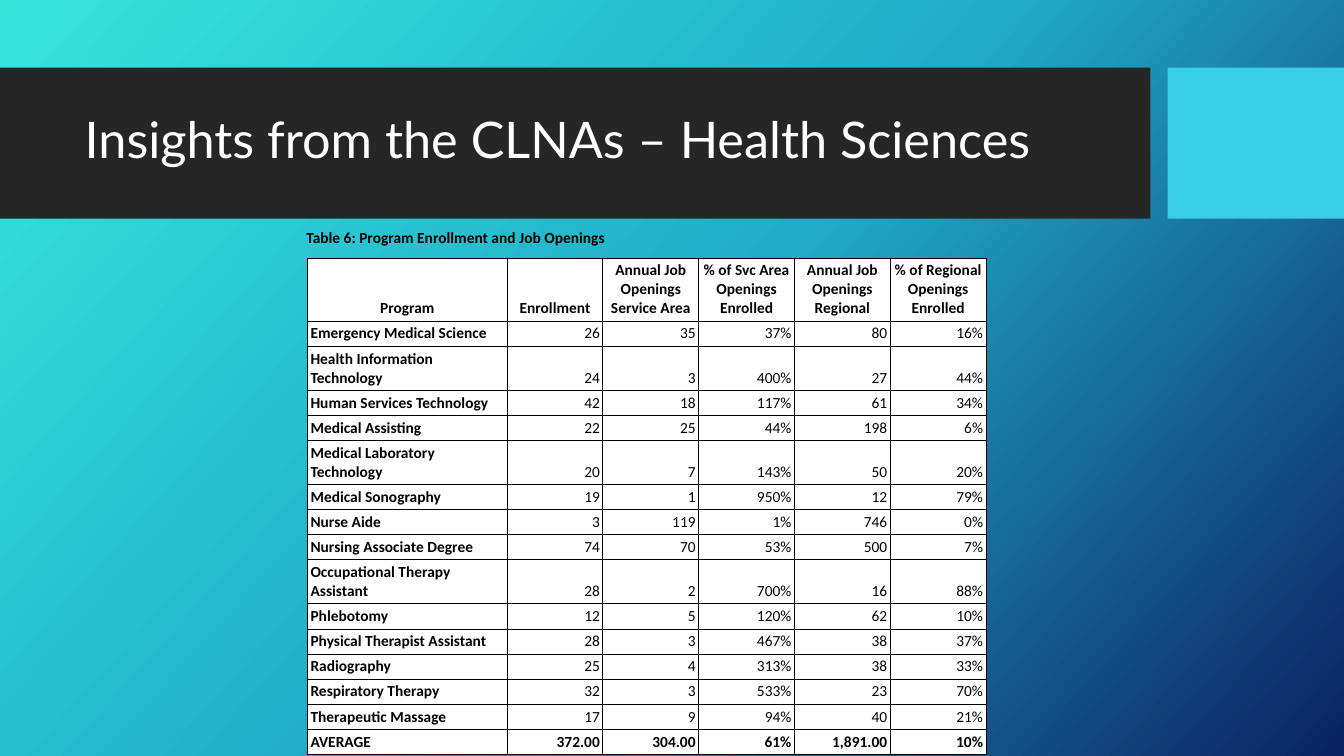
from copy import deepcopy
from dataclasses import dataclass
from typing import Any, NamedTuple

from lxml.etree import SubElement
from pptx import Presentation
from pptx.dml.color import RGBColor
from pptx.enum.shapes import MSO_SHAPE
from pptx.enum.text import MSO_ANCHOR, PP_ALIGN
from pptx.oxml import parse_xml
from pptx.oxml.ns import nsdecls, qn
from pptx.util import Inches, Pt


@dataclass(frozen=True)
class Theme:
    dark: str = "262626"
    bright: str = "39CDE7"
    white: str = "FFFFFF"
    black: str = "000000"
    stops: tuple = ((0, "36E6DD"), (0.5, "21ABC8"), (1, "0C2263"))
    head: str = "Lato"
    body: str = "Calibri"
    large: int = 36
    small: int = 11
    rule: float = 0.75


class Box(NamedTuple):
    left: float
    top: float
    width: float
    height: float

    def place(self) -> list:
        return [Inches(side) for side in self]


class Bar(NamedTuple):
    box: Box
    color: str


class Program(NamedTuple):
    name: str
    cells: str
    height: float = 0.23
    bold: bool = False


THEME = Theme()
BARS = (
    Bar(Box(0, 0.67, 11.41, 1.5), THEME.dark),
    Bar(Box(11.58, 0.67, 1.75, 1.5), THEME.bright),
)
WIDTHS = [1.98] + [0.95] * 5
HEADS = (
    "Program",
    "Enrollment",
    "Annual Job\nOpenings\nService Area",
    "% of Svc Area\nOpenings\nEnrolled",
    "Annual Job\nOpenings\nRegional",
    "% of Regional\nOpenings\nEnrolled",
)
ROWS = (
    Program("Emergency Medical Science", "26 35 37% 80 16%"),
    Program("Health Information Technology", "24 3 400% 27 44%"),
    Program("Human Services Technology", "42 18 117% 61 34%"),
    Program("Medical Assisting", "22 25 44% 198 6%"),
    Program("Medical Laboratory Technology", "20 7 143% 50 20%", 0.38),
    Program("Medical Sonography", "19 1 950% 12 79%"),
    Program("Nurse Aide", "3 119 1% 746 0%"),
    Program("Nursing Associate Degree", "74 70 53% 500 7%"),
    Program("Occupational Therapy Assistant", "28 2 700% 16 88%", 0.38),
    Program("Phlebotomy", "12 5 120% 62 10%"),
    Program("Physical Therapist Assistant", "28 3 467% 38 37%"),
    Program("Radiography", "25 4 313% 38 33%"),
    Program("Respiratory Therapy", "32 3 533% 23 70%"),
    Program("Therapeutic Massage", "17 9 94% 40 21%"),
    Program("AVERAGE", "372.00 304.00 61% 1,891.00 10%", bold=True),
)


def apply(item: Any, values: dict) -> None:
    for name, value in values.items():
        setattr(item, name, value)


def write(frame: Any, text: str, face: str, size: int, color: str,
          bold: bool = False, align: Any = PP_ALIGN.LEFT) -> None:
    frame.text = text
    for line in frame.paragraphs:
        line.alignment = align
        for run in line.runs:
            apply(run.font, {"name": face, "size": Pt(size), "bold": bold})
            run.font.color.rgb = RGBColor.from_string(color)


def paint(fill: Any, color: str) -> None:
    fill.solid()
    fill.fore_color.rgb = RGBColor.from_string(color)


def shade(slide: Any) -> None:
    fill = slide.background.fill
    fill.gradient()
    fill.gradient_angle = 360 - 42
    first = fill.gradient_stops[0]
    first.color.rgb = RGBColor.from_string(THEME.white)
    root = slide.element.find(".//" + qn("a:gsLst"))
    model = deepcopy(root[0])
    root[:] = [deepcopy(model) for _ in THEME.stops]
    for stop, (place, color) in zip(fill.gradient_stops, THEME.stops):
        stop.position = place
        stop.color.rgb = RGBColor.from_string(color)


def draw_bar(slide: Any, bar: Bar) -> None:
    shape = slide.shapes.add_shape(MSO_SHAPE.RECTANGLE, *bar.box.place())
    shape.shadow.inherit = False
    shape.line.fill.background()
    paint(shape.fill, bar.color)


def draw_title(slide: Any) -> None:
    title = slide.shapes.title
    title.element.getparent().append(title.element)
    sides = Box(0.74, 0.82, 10.51, 1.18).place()
    apply(title, dict(zip(Box._fields, sides)))
    frame = title.text_frame
    apply(frame, {"vertical_anchor": MSO_ANCHOR.MIDDLE, "word_wrap": True})
    write(frame, "Insights from the CLNAs – Health Sciences",
          THEME.head, THEME.large, THEME.white)
    frame.paragraphs[0].line_spacing = 0.9


def edge(cell: Any) -> None:
    props = cell._tc.get_or_add_tcPr()
    for spot, side in enumerate("LRTB"):
        line = parse_xml(f'<a:ln{side} {nsdecls("a")} w="{Pt(THEME.rule)}"/>')
        fill = SubElement(line, qn("a:solidFill"))
        SubElement(fill, qn("a:srgbClr"), val=THEME.black)
        props.insert(spot, line)


def fill_cell(cell: Any, text: str, bold: bool, align: Any) -> None:
    inset = Inches(0.03)
    apply(cell, {
        "margin_left": inset, "margin_right": inset,
        "margin_top": inset, "margin_bottom": inset,
        "vertical_anchor": MSO_ANCHOR.BOTTOM,
    })
    write(cell.text_frame, text, THEME.body, THEME.small, THEME.black,
          bold, align)
    paint(cell.fill, THEME.white)
    edge(cell)


def draw_table(slide: Any) -> None:
    box = Box(3.05, 2.56, sum(WIDTHS), 4.69)
    table = slide.shapes.add_table(
        len(ROWS) + 1, len(HEADS), *box.place()).table
    apply(table, {"first_row": False, "horz_banding": False})
    for column, width in zip(table.columns, WIDTHS):
        column.width = Inches(width)
    table.rows[0].height = Inches(0.58)
    for col, text in enumerate(HEADS):
        fill_cell(table.cell(0, col), text, True, PP_ALIGN.CENTER)
    for row, item in enumerate(ROWS, 1):
        table.rows[row].height = Inches(item.height)
        fill_cell(table.cell(row, 0), item.name, True, PP_ALIGN.LEFT)
        for col, text in enumerate(item.cells.split(), 1):
            fill_cell(table.cell(row, col), text, item.bold, PP_ALIGN.RIGHT)


def draw_label(slide: Any) -> None:
    box = Box(2.94, 2.21, 3.3, 0.3)
    frame = slide.shapes.add_textbox(*box.place()).text_frame
    apply(frame, {"vertical_anchor": MSO_ANCHOR.MIDDLE, "word_wrap": False})
    write(frame, "Table 6: Program Enrollment and Job Openings",
          THEME.body, THEME.small, THEME.black, True)


def main() -> None:
    deck = Presentation()
    apply(deck, {"slide_width": Inches(13.33), "slide_height": Inches(7.5)})
    slide = deck.slides.add_slide(deck.slide_layouts[5])
    shade(slide)
    for bar in BARS:
        draw_bar(slide, bar)
    draw_title(slide)
    draw_table(slide)
    draw_label(slide)
    deck.save("out.pptx")


if __name__ == "__main__":
    main()
